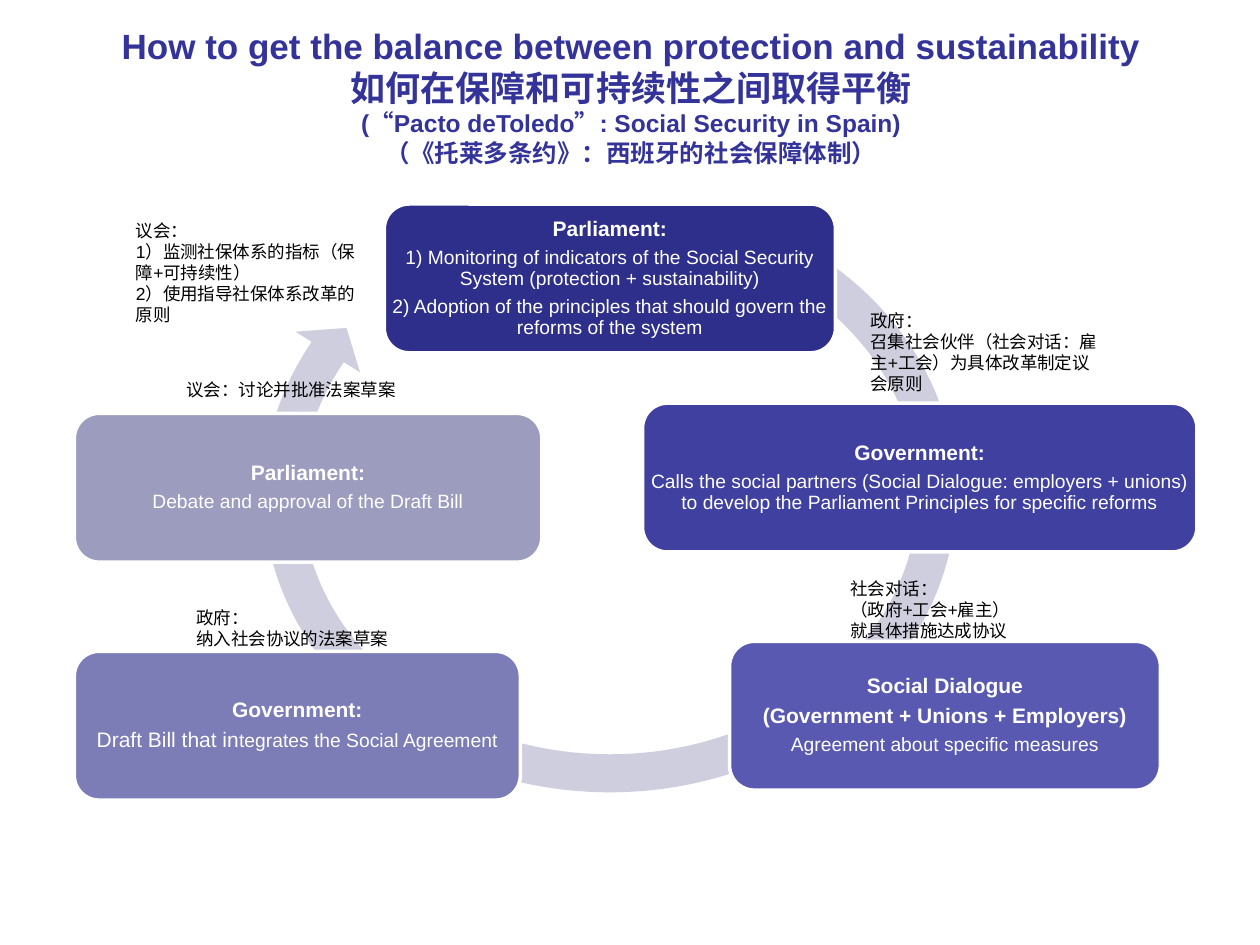
"""Build the slide on the Pacto de Toledo reform cycle."""
from pptx import Presentation
from pptx.dml.color import RGBColor
from pptx.enum.shapes import MSO_SHAPE
from pptx.enum.text import MSO_ANCHOR, MSO_AUTO_SIZE, PP_ALIGN
from pptx.util import Pt

WHITE = RGBColor(0xFF, 0xFF, 0xFF)
BLACK = RGBColor(0x00, 0x00, 0x00)
TITLE = RGBColor(0x33, 0x33, 0x99)
RING = RGBColor(0xCE, 0xCE, 0xDE)
NAVY = RGBColor(0x2E, 0x2E, 0x8B)
INDIGO = RGBColor(0x40, 0x40, 0xA1)
VIOLET = RGBColor(0x59, 0x59, 0xB1)
LILAC = RGBColor(0x7C, 0x7C, 0xB7)
GREY = RGBColor(0x9C, 0x9C, 0xBF)

HEAD = {"size": Pt(12), "bold": True}
LARGE = {"size": Pt(12), "bold": False}
BODY = {"size": Pt(11), "bold": False}
BOX_H = 85
NOTE_W = 147.6

STEPS = [
    (219.6, 116.6, 257.8, NAVY, [
        [("Parliament:", HEAD)],
        [("1) Monitoring of indicators of the Social Security System "
          "(protection + sustainability)", BODY)],
        [("2) Adoption of the principles that should govern the reforms "
          "of the system", BODY)]]),
    (367.2, 230.4, 316.8, INDIGO, [
        [("Government:", HEAD)],
        [("Calls the social partners (Social Dialogue: employers + unions) "
          "to develop the Parliament Principles for specific reforms", BODY)]]),
    (416.9, 366.5, 246.2, VIOLET, [
        [("Social Dialogue", HEAD)],
        [("(Government + Unions + Employers)", HEAD)],
        [("Agreement about specific measures", BODY)]]),
    (42.5, 372.2, 254.9, LILAC, [
        [("Government:", HEAD)],
        [("Draft Bill that in", LARGE),
         ("tegrates the Social Agreement", BODY)]]),
    (42.5, 236.2, 267.1, GREY, [
        [("Parliament:", HEAD)],
        [("Debate and approval of the Draft Bill", BODY)]]),
]

NOTES = [
    (105.1, 343.4, 31.7, ["政府：", "纳入社会协议的法案草案"]),
    (99.4, 213.1, 19.4, ["议会：讨论并批准法案草案"]),
    (490.3, 173.5, 55.4, ["政府：", "召集社会伙伴（社会对话：雇主+工会）为具体改革制定议会原则"]),
    (70.6, 122.4, 67.7, ["议会：", "1）监测社保体系的指标（保障+可持续性）",
                         "2）使用指导社保体系改革的原则"]),
    (478.8, 326.9, 43.9, ["社会对话：", "（政府+工会+雇主）", "就具体措施达成协议"]),
]


def apply(obj, values):
    for name, value in values.items():
        setattr(obj, name, value)


class Deck:
    def __init__(self, prs, font):
        self.font = font
        self.s = prs.slides.add_slide(prs.slide_layouts[6])

    def run(self, p, text, color, values):
        r = p.add_run()
        r.text = text
        apply(r.font, {"name": self.font, **values})
        r.font.color.rgb = color

    def shape(self, kind, box, fill):
        sp = self.s.shapes.add_shape(kind, *map(Pt, box))
        sp.shadow.inherit = False
        sp.fill.solid()
        sp.fill.fore_color.rgb = fill
        sp.line.fill.background()
        return sp

    def text_frame(self, box, values):
        tf = self.s.shapes.add_textbox(*map(Pt, box)).text_frame
        apply(tf, {"word_wrap": True, **values})
        return tf

    def paragraphs(self, tf, rows, color, values):
        for i, row in enumerate(rows):
            p = tf.add_paragraph() if i else tf.paragraphs[0]
            apply(p, values)
            for text, fmt in row:
                self.run(p, text, color, fmt)

    def title(self, box, lines):
        tf = self.text_frame(box, {"vertical_anchor": MSO_ANCHOR.MIDDLE})
        p = tf.paragraphs[0]
        p.alignment = PP_ALIGN.CENTER
        for i, (text, size) in enumerate(lines):
            if i:
                p.add_line_break()
            self.run(p, text, TITLE, {"size": Pt(size), "bold": True})

    def ring(self, box, adjustments):
        sp = self.shape(MSO_SHAPE.CIRCULAR_ARROW, box, RING)
        for i, value in enumerate(adjustments):
            sp.adjustments[i] = value

    def step(self, x, y, w, fill, rows):
        sp = self.shape(MSO_SHAPE.ROUNDED_RECTANGLE, (x, y, w, BOX_H), fill)
        sp.line.color.rgb = WHITE
        sp.line.width = Pt(2)
        tf = sp.text_frame
        apply(tf, {"word_wrap": True, "vertical_anchor": MSO_ANCHOR.MIDDLE,
                   "margin_left": 0, "margin_right": 0,
                   "margin_top": 0, "margin_bottom": 0})
        self.paragraphs(tf, rows, WHITE, {
            "alignment": PP_ALIGN.CENTER, "line_spacing": 0.9,
            "space_after": Pt(4)})

    def note(self, x, y, h, lines):
        tf = self.text_frame((x, y, NOTE_W, h),
                             {"auto_size": MSO_AUTO_SIZE.SHAPE_TO_FIT_TEXT})
        rows = [[(line, {"size": Pt(10)})] for line in lines]
        self.paragraphs(tf, rows, BLACK, {"alignment": PP_ALIGN.LEFT})


def main():
    prs = Presentation()
    apply(prs, {"slide_width": Pt(720), "slide_height": Pt(540)})
    deck = Deck(prs, "Arial")
    deck.title((36.7, 15.1, 648, 79.2), [
        ("How to get the balance between protection and sustainability", 20),
        ("如何在保障和可持续性之间取得平衡", 20),
        ("(“Pacto deToledo”: Social Security in Spain)", 14),
        ("（《托莱多条约》：西班牙的社会保障体制）", 14)])
    deck.ring((139.7, 100.8, 417.6, 362.9), (0.06, 3.31, 124.02, 182.91, 0.06))
    for step in STEPS:
        deck.step(*step)
    for note in NOTES:
        deck.note(*note)
    prs.save("out.pptx")


if __name__ == "__main__":
    main()
